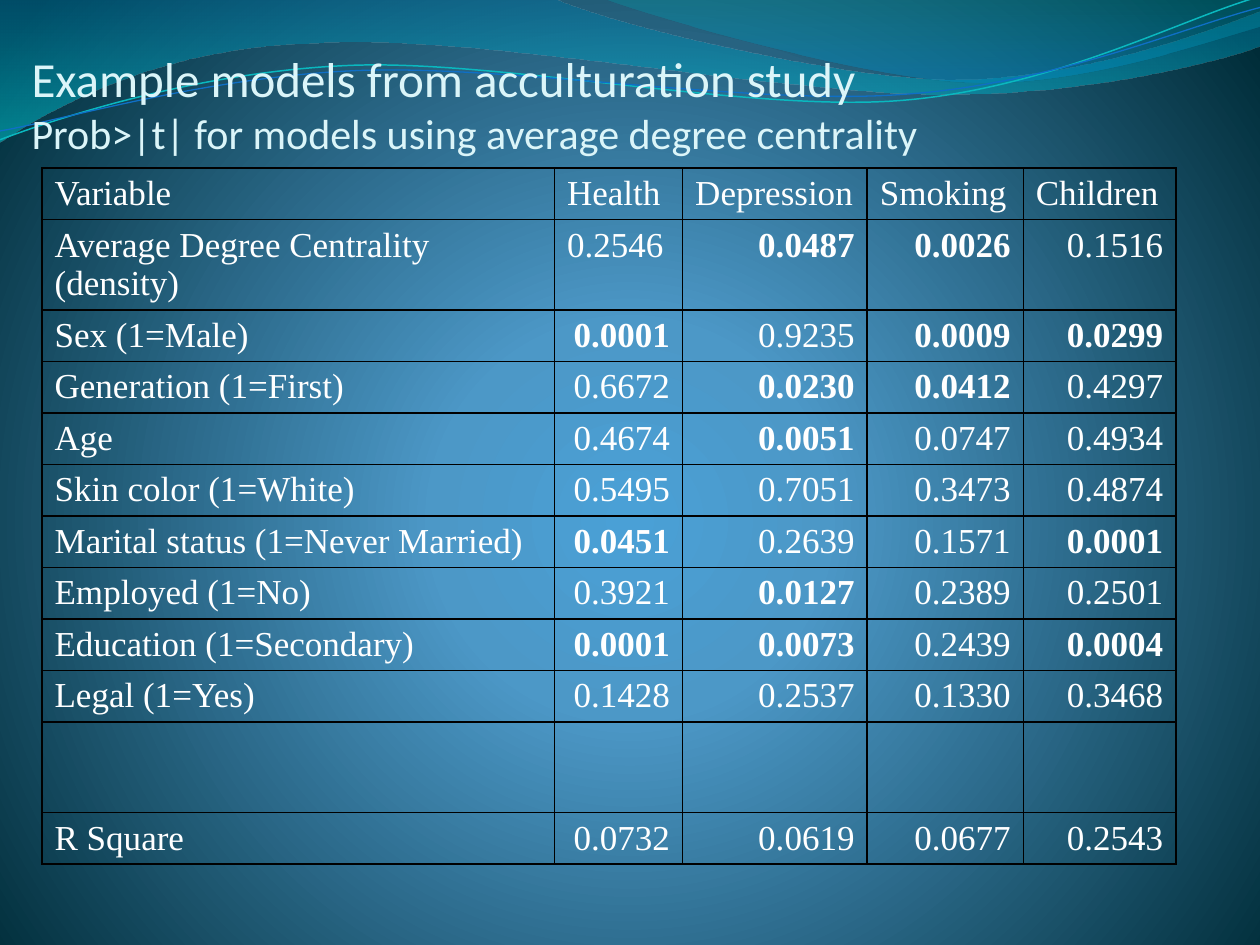
from dataclasses import dataclass

import lxml.etree
import pptx
import pptx.dml.color
import pptx.enum.text
import pptx.oxml.ns
import pptx.util
from pptx.util import Pt

Point = tuple[float, float]
Segment = tuple[Point, ...]


@dataclass
class Stop:
    position: int
    color: str
    opacity: int = 100


@dataclass
class Wave:
    start: Point
    segments: list[Segment]
    stops: list[Stop]


@dataclass
class Ribbon:
    start: Point
    segments: list[Segment]
    color: str
    weight: float
    rotation: float = 357.3


@dataclass
class ModelRow:
    variable: str
    values: tuple[str, ...]
    height: float = 29.4
    left_columns: tuple[int, ...] = (0,)


WAVES = [
    Wave((0, 0), [
        ((316.8, -0.7),),
        ((342.7, 12.2), (478, 45.4), (545.8, 45.4)),
        ((614.2, 45.4), (689.8, 18.7), (720, 6.5)),
        ((720.7, 25.9),),
        ((707.8, 31.7), (626.4, 54.7), (537.1, 54)),
        ((447.8, 54), (275, 20.2), (185, 24.5)),
        ((92.9, 25.9), (33.1, 59.8), (-0.7, 81.4)),
    ], [Stop(0, "0074A1", 45), Stop(100, "00C6CF", 55)]),
    Wave((344.9, -0.7), [
        ((366.5, 7.9), (491, 44.6), (553.7, 46.8)),
        ((616.3, 49.7), (691.9, 23), (720, 15.1)),
        ((720, 0),),
    ], [Stop(0, "00A1A9", 30), Stop(80, "008BBF", 45)]),
]

RIBBONS = [
    Ribbon((-1.4, 62.9), [
        ((33.7, 51.6), (114, 29.4), (199.8, 29.9)),
        ((284.8, 30.3), (425.8, 67.2), (512.4, 64.8)),
        ((599, 62.4), (676.4, 25.7), (719.7, 15.5)),
    ], "0AB8BF", 0.85),
    Ribbon((-1.2, 57.9), [
        ((33, 53.7), (118.3, 32.5), (204, 33)),
        ((290.5, 33.5), (428.9, 63.8), (515.5, 61.3)),
        ((601.4, 59.6), (678.5, 30.1), (721.4, 21.3)),
    ], "0F6FC6", 0.75),
]

COLUMN_WIDTHS = [292.8, 73.3, 105.5, 89.2, 87.2]
MODEL_ROWS = [
    ModelRow("Variable", ("Health", "Depression", "Smoking", "Children"),
             left_columns=(0, 1, 2, 3, 4)),
    ModelRow("Average Degree Centrality (density)",
             ("0.2546", "0.0487", "0.0026", "0.1516"), 51.6, (0, 1)),
    ModelRow("Sex (1=Male)", ("0.0001", "0.9235", "0.0009", "0.0299")),
    ModelRow("Generation (1=First)", ("0.6672", "0.0230", "0.0412", "0.4297")),
    ModelRow("Age", ("0.4674", "0.0051", "0.0747", "0.4934")),
    ModelRow("Skin color (1=White)", ("0.5495", "0.7051", "0.3473", "0.4874")),
    ModelRow("Marital status (1=Never Married)",
             ("0.0451", "0.2639", "0.1571", "0.0001")),
    ModelRow("Employed (1=No)", ("0.3921", "0.0127", "0.2389", "0.2501")),
    ModelRow("Education (1=Secondary)", ("0.0001", "0.0073", "0.2439", "0.0004")),
    ModelRow("Legal (1=Yes)", ("0.1428", "0.2537", "0.1330", "0.3468")),
    ModelRow("", ("", "", "", ""), 52),
    ModelRow("R Square", ("0.0732", "0.0619", "0.0677", "0.2543")),
]


def rgb(color: str) -> pptx.dml.color.RGBColor:
    return pptx.dml.color.RGBColor.from_string(color)


def add_xml(parent, tag: str, **attributes):
    return lxml.etree.SubElement(parent, pptx.oxml.ns.qn(tag), attributes)


def set_gradient(owner, fill, stops: list[Stop], radial: bool = False) -> None:
    fill.gradient()
    gradient = owner.element.find(".//" + pptx.oxml.ns.qn("a:gradFill"))
    for child in list(gradient):
        gradient.remove(child)
    stop_list = add_xml(gradient, "a:gsLst")
    for stop in stops:
        entry = add_xml(stop_list, "a:gs", pos=str(stop.position * 1000))
        color = add_xml(entry, "a:srgbClr", val=stop.color)
        if stop.opacity < 100:
            add_xml(color, "a:alpha", val=str(stop.opacity * 1000))
    if radial:
        focus = add_xml(gradient, "a:path", path="circle")
        add_xml(focus, "a:fillToRect", l="10000", t="110000", r="10000", b="100000")
    else:
        add_xml(gradient, "a:lin", ang="5400000", scaled="0")


def add_outline(slide, start: Point, segments: list[Segment], close: bool):
    builder = slide.shapes.build_freeform(Pt(start[0]), Pt(start[1]))
    builder.add_line_segments(
        [(Pt(x), Pt(y)) for segment in segments for x, y in segment], close=close)
    outline = builder.convert_to_shape()
    outline.shadow.inherit = False
    steps = iter(list(outline.element.iter(pptx.oxml.ns.qn("a:lnTo"))))
    for segment in segments:
        first, *others = [next(steps) for _ in segment]
        if others:
            first.tag = pptx.oxml.ns.qn("a:cubicBezTo")
            for other in others:
                first.append(other[0])
                other.getparent().remove(other)
    return outline


def add_wave(slide, wave: Wave) -> None:
    outline = add_outline(slide, wave.start, wave.segments, True)
    set_gradient(outline, outline.fill, wave.stops)
    outline.line.fill.background()


def add_ribbon(slide, ribbon: Ribbon) -> None:
    outline = add_outline(slide, ribbon.start, ribbon.segments, False)
    outline.rotation = ribbon.rotation
    outline.fill.background()
    outline.line.color.rgb = rgb(ribbon.color)
    outline.line.width = Pt(ribbon.weight)


def format_title(title) -> None:
    title.left, title.top, title.width, title.height = Pt(18), Pt(0), Pt(684), Pt(90)
    frame = title.text_frame
    frame.word_wrap = True
    frame.auto_size = pptx.enum.text.MSO_AUTO_SIZE.NONE
    frame.vertical_anchor = pptx.enum.text.MSO_ANCHOR.BOTTOM
    frame.margin_left = frame.margin_right = frame.margin_bottom = Pt(0)
    frame.margin_top = Pt(3.6)
    paragraph = frame.paragraphs[0]
    paragraph.alignment = pptx.enum.text.PP_ALIGN.LEFT
    paragraph.font.name = "Calibri"
    paragraph.font.color.rgb = rgb("DBF5F9")
    heading = paragraph.add_run()
    heading.text = "Example models from acculturation study"
    heading.font.size = Pt(28)
    paragraph.add_line_break()
    subheading = paragraph.add_run()
    subheading.text = "Prob>|t| for models using average degree centrality"
    subheading.font.size = Pt(24)
    title.element.getparent().append(title.element)


def fill_cell(cell, text: str, left: bool) -> None:
    cell.text = text
    paragraph = cell.text_frame.paragraphs[0]
    align = pptx.enum.text.PP_ALIGN
    paragraph.alignment = align.LEFT if left else align.RIGHT
    paragraph.font.name = "Times New Roman"
    paragraph.font.size = Pt(20)
    paragraph.font.color.rgb = rgb("FFFFFF")
    paragraph.font.bold = text.startswith("0.") and float(text) < 0.05
    properties = cell._tc.get_or_add_tcPr()
    for side in ("a:lnL", "a:lnR", "a:lnT", "a:lnB"):
        border = add_xml(properties, side, w=str(Pt(1)))
        add_xml(add_xml(border, "a:solidFill"), "a:srgbClr", val="000000")
    cell.fill.background()


def add_models(slide) -> None:
    models = slide.shapes.add_table(
        len(MODEL_ROWS), len(COLUMN_WIDTHS), Pt(24), Pt(96),
        Pt(sum(COLUMN_WIDTHS)), Pt(sum(row.height for row in MODEL_ROWS))).table
    models.first_row = models.horz_banding = False
    for column, width in zip(models.columns, COLUMN_WIDTHS):
        column.width = Pt(width)
    for row, model in zip(models.rows, MODEL_ROWS):
        row.height = Pt(model.height)
        for index, text in enumerate((model.variable, *model.values)):
            fill_cell(row.cells[index], text, index in model.left_columns)


def main() -> None:
    deck = pptx.Presentation()
    deck.slide_width, deck.slide_height = Pt(720), Pt(540)
    slide = deck.slides.add_slide(deck.slide_layouts[5])
    set_gradient(slide, slide.background.fill,
                 [Stop(0, "4AA0D6"), Stop(25, "4C98C7"), Stop(100, "002C38")], radial=True)
    for wave in WAVES:
        add_wave(slide, wave)
    for ribbon in RIBBONS:
        add_ribbon(slide, ribbon)
    format_title(slide.shapes.title)
    add_models(slide)
    deck.save("out.pptx")


if __name__ == "__main__":
    main()
